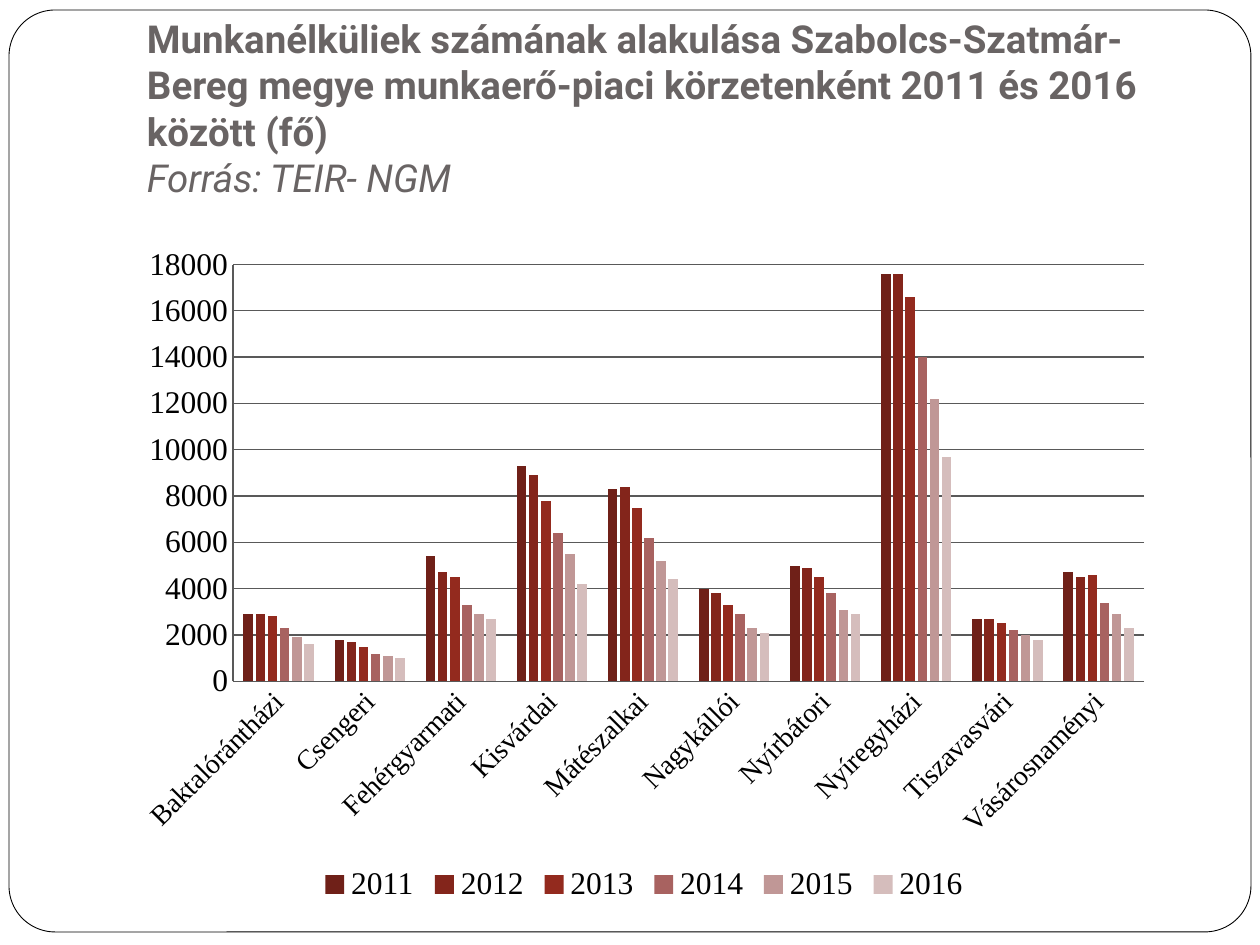
import pptx
import pptx.util
import pptx.dml.color
import pptx.chart.data
import pptx.enum.chart
import pptx.enum.shapes
import pptx.enum.text

SCALE = 914400 / 126
SANS = "Roboto"
SERIF = "Times New Roman"
INK = "000000"
GREY = "696464"
GRID = "595959"

AREAS = ["Baktalórántházi", "Csengeri", "Fehérgyarmati", "Kisvárdai",
         "Mátészalkai", "Nagykállói", "Nyírbátori", "Nyíregyházi",
         "Tiszavasvári", "Vásárosnaményi"]
YEARS = [
    ("2011", "6F2018", [2900, 1800, 5400, 9300, 8300, 4000, 5000, 17600, 2700, 4700]),
    ("2012", "83251B", [2900, 1700, 4700, 8900, 8400, 3800, 4900, 17600, 2700, 4500]),
    ("2013", "932A1E", [2800, 1500, 4500, 7800, 7500, 3300, 4500, 16600, 2500, 4600]),
    ("2014", "A86260", [2300, 1200, 3300, 6400, 6200, 2900, 3800, 14000, 2200, 3400]),
    ("2015", "C09796", [1900, 1100, 2900, 5500, 5200, 2300, 3100, 12200, 2000, 2900]),
    ("2016", "D5BDBC", [1600, 1000, 2700, 4200, 4400, 2100, 2900, 9700, 1800, 2300]),
]


def px(size):
    return pptx.util.Emu(round(size * SCALE))


def tint(code):
    return pptx.dml.color.RGBColor.from_string(code)


class Deck:
    def __init__(self, wide, high):
        self.file = pptx.Presentation()
        self.file.slide_width = px(wide)
        self.file.slide_height = px(high)
        self.slide = self.file.slides.add_slide(self.file.slide_layouts[5])

    def font(self, font, face, size, color):
        font.name = face
        font.size = pptx.util.Pt(size)
        font.color.rgb = tint(color)

    def stroke(self, line, color, width):
        line.color.rgb = tint(color)
        line.width = pptx.util.Pt(width)

    def frame(self, *box):
        kind = pptx.enum.shapes.MSO_SHAPE.ROUNDED_RECTANGLE
        shape = self.slide.shapes.add_shape(kind, *map(px, box))
        shape.adjustments[0] = 0.05
        shape.shadow.inherit = False
        shape.fill.solid()
        shape.fill.fore_color.rgb = tint("FFFFFF")
        self.stroke(shape.line, INK, 0.5)
        title = self.slide.shapes.title
        shape.element.addnext(title.element)

    def title(self, lines, *box):
        shape = self.slide.shapes.title
        shape.left, shape.top, shape.width, shape.height = map(px, box)
        text = shape.text_frame
        text.word_wrap = True
        text.auto_size = pptx.enum.text.MSO_AUTO_SIZE.NONE
        text.vertical_anchor = pptx.enum.text.MSO_ANCHOR.BOTTOM
        text.margin_left = text.margin_right = text.margin_bottom = px(13)
        text.margin_top = px(6)
        para = text.paragraphs[0]
        para.alignment = pptx.enum.text.PP_ALIGN.LEFT
        for spot, (words, bold, slant) in enumerate(lines):
            if spot:
                para.add_line_break()
            run = para.add_run()
            run.text = words
            self.font(run.font, SANS, 22, GREY)
            run.font.bold = bold
            run.font.italic = slant

    def chart(self, names, rows, *box):
        data = pptx.chart.data.CategoryChartData(number_format="0")
        data.categories = names
        for name, color, nums in rows:
            data.add_series(name, nums)
        kind = pptx.enum.chart.XL_CHART_TYPE.COLUMN_CLUSTERED
        chart = self.slide.shapes.add_chart(kind, *map(px, box), data).chart
        self.font(chart.font, SERIF, 18, INK)
        chart.has_title = False
        chart.has_legend = True
        chart.legend.position = pptx.enum.chart.XL_LEGEND_POSITION.BOTTOM
        chart.legend.include_in_layout = False
        self.font(chart.legend.font, SERIF, 18, INK)
        plot = chart.plots[0]
        plot.vary_by_categories = False
        plot.gap_width = 219
        plot.overlap = -27
        for bars, (name, color, nums) in zip(plot.series, rows):
            bars.invert_if_negative = False
            bars.format.fill.solid()
            bars.format.fill.fore_color.rgb = tint(color)
        for axis, size in ((chart.category_axis, 16), (chart.value_axis, 18)):
            axis.major_tick_mark = pptx.enum.chart.XL_TICK_MARK.NONE
            axis.minor_tick_mark = pptx.enum.chart.XL_TICK_MARK.NONE
            self.font(axis.tick_labels.font, SERIF, size, INK)
            self.stroke(axis.format.line, GRID, 0.75)
        turn = chart.category_axis._element.find(".//" + pptx.oxml.ns.qn("a:bodyPr"))
        turn.set("rot", "-2700000")
        turn.set("vert", "horz")
        axis = chart.value_axis
        axis.minimum_scale = 0
        axis.maximum_scale = 18000
        axis.major_unit = 2000
        axis.tick_labels.number_format = "0"
        axis.tick_labels.number_format_is_linked = False
        axis.has_major_gridlines = True
        self.stroke(axis.major_gridlines.format.line, GRID, 0.75)


def main():
    deck = Deck(1260, 945)
    deck.frame(9, 10, 1242, 922)
    deck.title([
        ("Munkanélküliek számának alakulása Szabolcs-Szatmár-Bereg megye "
         "munkaerő-piaci körzetenként 2011 és 2016 között (fő)", True, False),
        ("Forrás: TEIR- NGM", False, True),
    ], 134, 55, 1071, 158)
    deck.chart(AREAS, YEARS, 123, 234, 1042, 674)
    deck.file.save("out.pptx")


if __name__ == "__main__":
    main()
